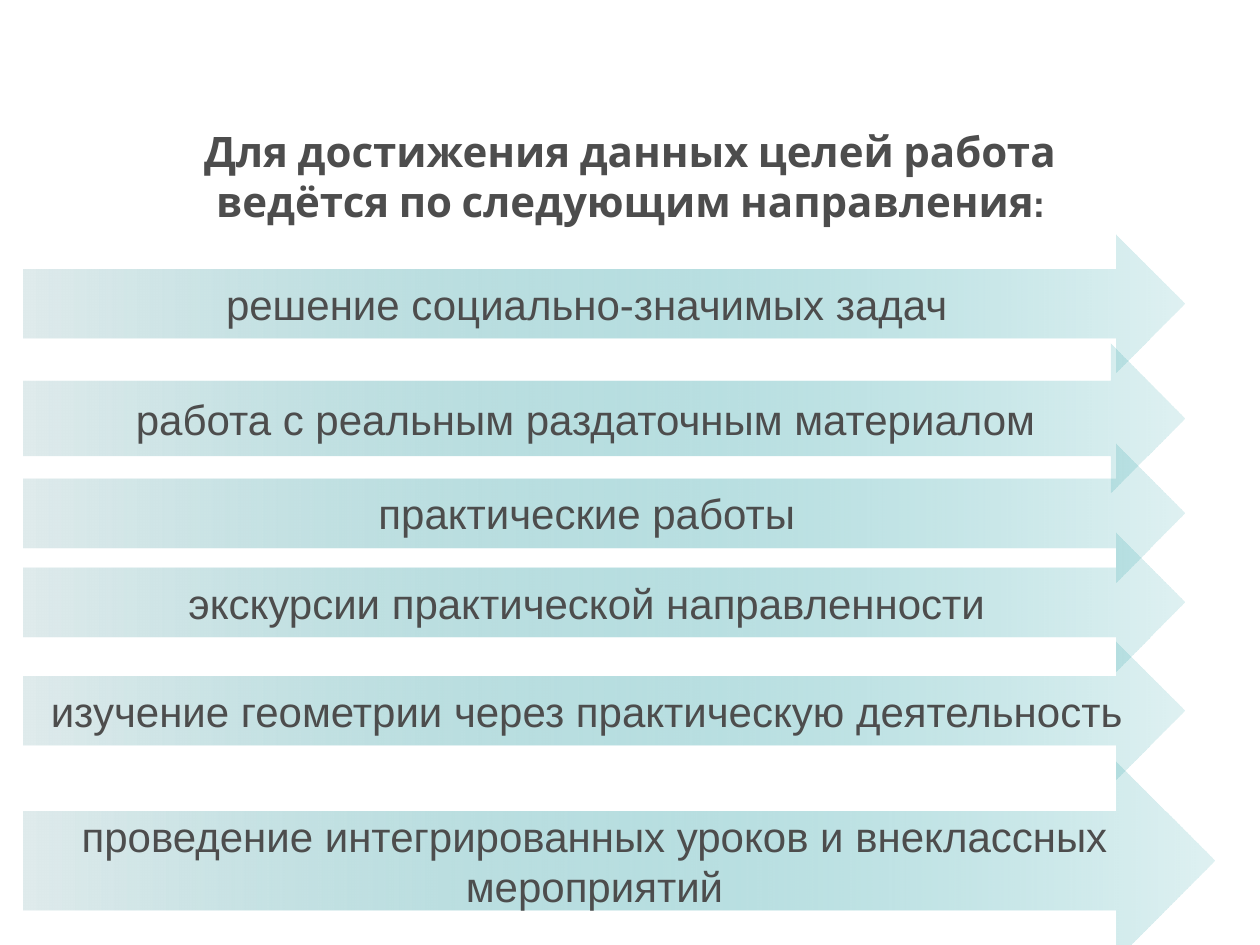
import pptx
import pptx.util
import pptx.dml.color
import pptx.enum.shapes
import pptx.enum.text
import pptx.oxml.ns
import lxml.etree

COLORS = {"text": "4D4D4D", "tip": "DFEBEC", "tail": "28A2A8"}
TAIL_ALPHA = "15000"
ARROW_LEFT = 0.19

deck = pptx.Presentation()
deck.slide_width = pptx.util.Inches(10)
deck.slide_height = pptx.util.Inches(7.5)
W, H = deck.slide_width, deck.slide_height
slide = deck.slides.add_slide(deck.slide_layouts[5])


def write_centered(frame, lines, font_values):
    frame.vertical_anchor = pptx.enum.text.MSO_ANCHOR.MIDDLE
    frame.text = "\n".join(lines)
    for paragraph in frame.paragraphs:
        paragraph.alignment = pptx.enum.text.PP_ALIGN.CENTER
        for run in paragraph.runs:
            run.font.color.rgb = pptx.dml.color.RGBColor.from_string(COLORS["text"])
            for key, value in font_values.items():
                setattr(run.font, key, value)


# Heading, raised a little inside its box by the bottom inset
heading = slide.shapes.title
heading_place = {"left": int(W * 0.1), "top": int(H * 0.101),
                 "width": int(W * 0.8), "height": int(H * 0.21)}
for key, value in heading_place.items():
    setattr(heading, key, value)
heading.text_frame.word_wrap = True
heading.text_frame.auto_size = pptx.enum.text.MSO_AUTO_SIZE.NONE
heading.text_frame.margin_bottom = pptx.util.Inches(0.35)
write_centered(heading.text_frame,
               ["Для достижения данных целей работа ведётся по следующим направления:"],
               {"size": pptx.util.Pt(24), "name": "Cabin", "bold": True})

# Directions of work: lines, centre height, thickness and length in inches
directions = [
    (["решение социально-значимых задач"], 2.41, 1.1, 9.21),
    (["работа с реальным раздаточным материалом"], 3.32, 1.18, 9.21),
    (["практические работы"], 4.07, 1.1, 9.21),
    (["экскурсии практической направленности"], 4.78, 1.1, 9.21),
    (["изучение геометрии через практическую деятельность"], 5.64, 1.1, 9.21),
    (["проведение интегрированных уроков и внеклассных", "мероприятий"],
     6.83, 1.57, 9.45),
]
for lines, middle, thickness, length in directions:
    # Down arrow turned to point right around its centre
    arrow = slide.shapes.add_shape(
        pptx.enum.shapes.MSO_SHAPE.DOWN_ARROW,
        pptx.util.Inches(ARROW_LEFT + (length - thickness) / 2),
        pptx.util.Inches(middle - length / 2),
        pptx.util.Inches(thickness), pptx.util.Inches(length))
    arrow.rotation = 270
    arrow.shadow.inherit = False
    arrow.line.fill.background()

    # Gradient from the tip to a nearly clear tail
    arrow.fill.gradient()
    arrow.fill.gradient_angle = 270
    for stop, part in zip(arrow.fill.gradient_stops, ("tip", "tail")):
        stop.color.rgb = pptx.dml.color.RGBColor.from_string(COLORS[part])
    tail_color = arrow.element.spPr.findall(".//" + pptx.oxml.ns.qn("a:srgbClr"))[-1]
    lxml.etree.SubElement(tail_color, pptx.oxml.ns.qn("a:alpha"), val=TAIL_ALPHA)

    # Vertical text reads level once the arrow is turned
    arrow.text_frame.word_wrap = False
    arrow.element.txBody.find(pptx.oxml.ns.qn("a:bodyPr")).set("vert", "vert")
    write_centered(arrow.text_frame, lines,
                   {"size": pptx.util.Pt(24), "name": "Arial"})

deck.save("out.pptx")
